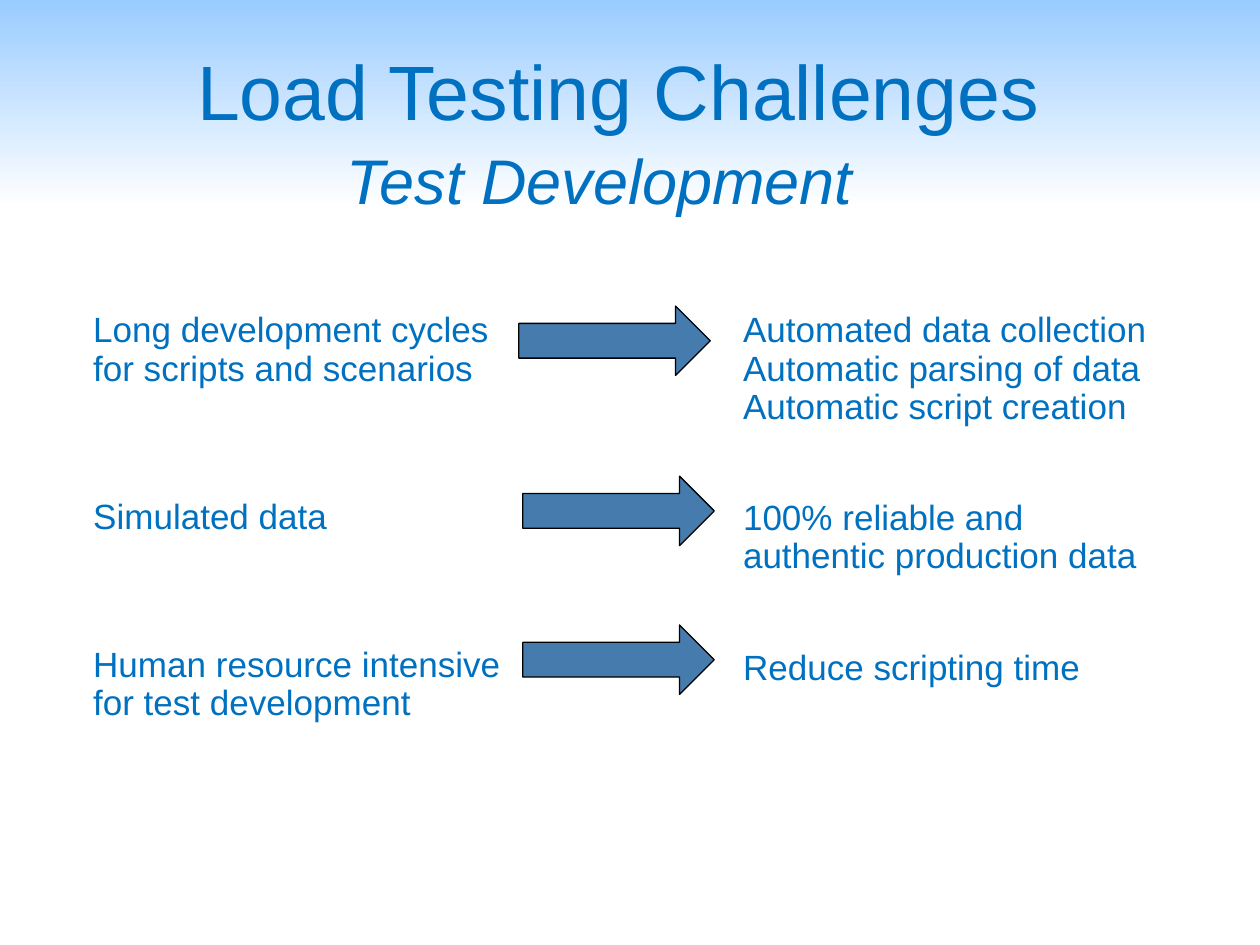
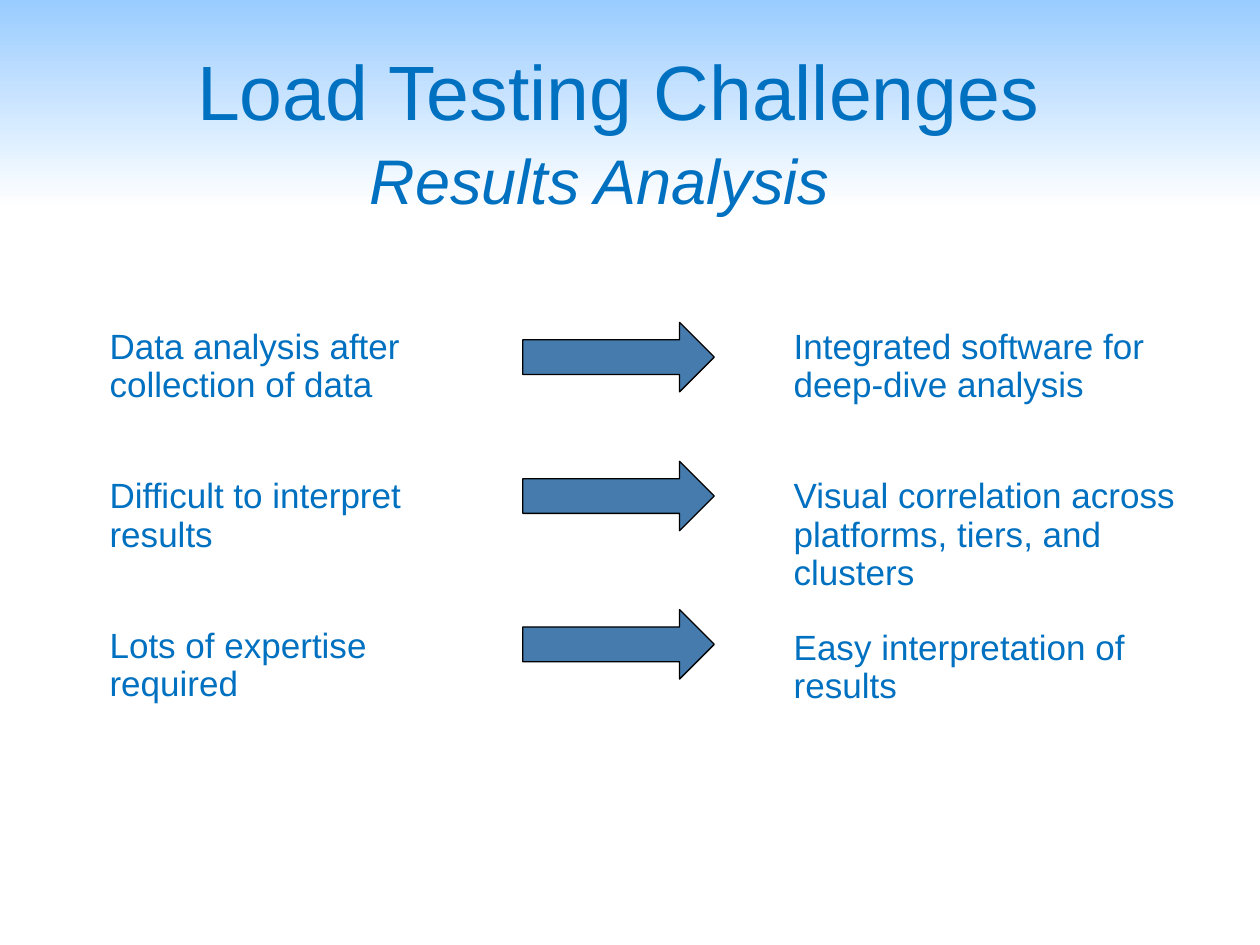
from pptx import Presentation
from pptx.dml.color import RGBColor
from pptx.enum.shapes import MSO_SHAPE
from pptx.enum.text import MSO_ANCHOR, PP_ALIGN
from pptx.util import Cm, Pt

RECTANGLE = MSO_SHAPE.RECTANGLE
RIGHT_ARROW = MSO_SHAPE.RIGHT_ARROW
TOP, MIDDLE = MSO_ANCHOR.TOP, MSO_ANCHOR.MIDDLE
LEFT, CENTER = PP_ALIGN.LEFT, PP_ALIGN.CENTER

COLORS = {
    "sky": "99CCFF",
    "white": "FFFFFF",
    "text": "0070C0",
    "arrow": "457BAD",
    "outline": "000000",
}
FONT = "Arial"
LINE_SPACING = 0.91
BODY_SIZE = 20
BODY_LINE = 20.9  # height in points of one body line
COLUMN_HEIGHT = 8.4
SLIDE_WIDTH, SLIDE_HEIGHT = 25.4, 19.05

# Each column entry is (text, blank lines above it).
SLIDES = [
    {
        "subtitle": "Test Development",
        "top": 6.17,
        "challenges": (1.63, 9.32, [
            ("Long development cycles for scripts and scenarios", 0),
            ("Simulated data", 3),
            ("Human resource intensive for test development", 3),
        ]),
        "solutions": (14.73, 8.74, [
            ("Automated data collection", 0),
            ("Automatic parsing of data", 0),
            ("Automatic script creation", 0),
            ("100% reliable and authentic production data", 2),
            ("Reduce scripting time", 2),
        ]),
        "arrows": [(10.46, 6.17), (10.54, 9.6), (10.54, 12.6)],
    },
    {
        "subtitle": "Results Analysis",
        "top": 6.5,
        "challenges": (1.96, 8.46, [
            ("Data analysis after collection of data", 0),
            ("Difficult to interpret results", 2),
            ("Lots of expertise required", 2),
        ]),
        "solutions": (15.75, 8.74, [
            ("Integrated software for deep-dive analysis", 0),
            ("Visual correlation across platforms, tiers, and clusters", 2),
            ("Easy interpretation of results", 1),
        ]),
        "arrows": [(10.54, 6.5), (10.54, 9.3), (10.54, 12.29)],
    },
]


def color(name):
    return RGBColor.from_string(COLORS[name])


def add_band(page):
    band = page.shapes.add_shape(RECTANGLE, 0, 0, Cm(SLIDE_WIDTH), Cm(4.19))
    band.shadow.inherit = False
    band.line.fill.background()
    band.fill.gradient()
    band.fill.gradient_angle = 270
    for stop, name in zip(band.fill.gradient_stops, ("sky", "white")):
        stop.color.rgb = color(name)


def add_text(page, left, top, width, height, entries, size,
             align=LEFT, anchor=TOP, italic=False):
    box = page.shapes.add_textbox(Cm(left), Cm(top), Cm(width), Cm(height))
    frame = box.text_frame
    frame.word_wrap = True
    frame.vertical_anchor = anchor
    frame.text = "\n".join(text for text, _ in entries)
    for para, (_, blank_lines) in zip(frame.paragraphs, entries):
        para.alignment = align
        para.line_spacing = LINE_SPACING
        para.space_before = Pt(blank_lines * BODY_LINE)
        for span in para.runs:
            span.font.name = FONT
            span.font.size = Pt(size)
            span.font.italic = italic
            span.font.color.rgb = color("text")


def add_heading(page, subtitle):
    add_text(page, 1.04, 0.94, 22.86, 2.64,
             [("Load Testing Challenges", 0)], 44, CENTER)
    add_text(page, 0.66, 2.38, 22.86, 2.64,
             [(subtitle, 0)], 36, CENTER, MIDDLE, italic=True)


def add_arrow(page, left, top):
    arrow = page.shapes.add_shape(RIGHT_ARROW, Cm(left), Cm(top), Cm(3.86), Cm(1.4))
    arrow.shadow.inherit = False
    arrow.fill.solid()
    arrow.fill.fore_color.rgb = color("arrow")
    arrow.line.color.rgb = color("outline")
    arrow.line.width = Pt(0.75)


def main():
    deck = Presentation()
    deck.slide_width, deck.slide_height = Cm(SLIDE_WIDTH), Cm(SLIDE_HEIGHT)
    for content in SLIDES:
        page = deck.slides.add_slide(deck.slide_layouts[6])
        add_band(page)
        add_heading(page, content["subtitle"])
        for side in ("challenges", "solutions"):
            left, width, entries = content[side]
            add_text(page, left, content["top"], width, COLUMN_HEIGHT, entries, BODY_SIZE)
        for left, top in content["arrows"]:
            add_arrow(page, left, top)
    deck.save("out.pptx")


if __name__ == "__main__":
    main()
